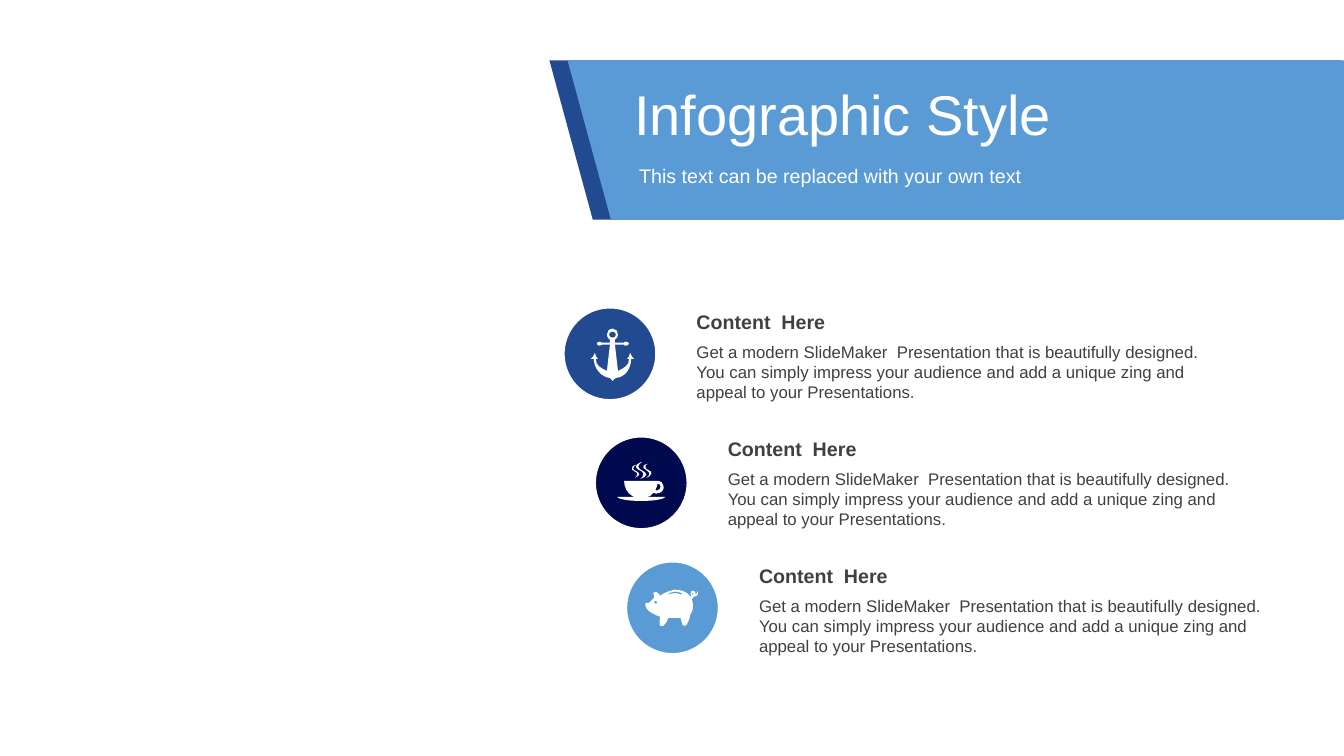
from lxml import etree
from pptx import Presentation
from pptx.dml.color import RGBColor
from pptx.enum.shapes import MSO_SHAPE as Shape
from pptx.enum.text import MSO_ANCHOR as Anchor
from pptx.oxml.ns import qn
from pptx.util import Inches, Pt

NAVY, BLUE, INK = "224A90", "5A9BD5", "010A4F"
WHITE, GREY = "FFFFFF", "404040"
BODY = ("Get a modern SlideMaker  Presentation that is beautifully designed. "
        "You can simply impress your audience and add a unique zing and "
        "appeal to your Presentations.")

# Icon outlines in hundredths of an inch: M move, L line, C cubic curve, Z close
ANCHOR = """
M 22 3 C 20 3 18 4 18 6 C 18 8 20 9 22 9 C 23 9 25 8 25 6 C 25 4 23 3 22 3 Z
M 22 0 C 25 0 27 3 27 6 C 27 8 26 10 24 11 L 24 14 L 33 14
C 33 13 34 13 35 13 C 36 13 38 14 38 15 C 38 16 36 17 35 17
C 34 17 33 17 33 16 L 24 16 L 27 42 C 33 39 38 37 38 30
C 37 30 37 30 36 30 C 37 29 39 27 39 24 C 40 27 41 28 43 30
C 42 30 41 30 40 30 C 40 39 35 48 25 49 C 23 50 22 51 22 52
C 21 51 20 50 19 49 C 10 48 3 39 3 30 C 2 30 1 30 0 30
C 2 29 3 27 4 24 C 4 27 6 28 7 30 C 7 30 6 30 5 30 C 5 37 10 39 16 42
L 19 16 L 11 16 C 10 17 10 17 9 17 C 7 17 6 16 6 15 C 6 14 7 13 9 13
C 10 13 10 13 11 14 L 19 14 L 19 11 C 17 10 16 8 16 6 C 16 3 18 0 22 0 Z"""
CUP = """
M 40 22 C 40 24 39 26 38 28 C 39 29 40 29 41 28 C 43 28 43 26 43 24
C 43 23 42 22 40 22 Z
M 41 19 C 43 19 46 21 46 24 C 47 27 45 30 42 31 C 40 32 38 32 36 31
C 35 32 34 33 33 34 C 32 34 30 35 29 35 L 48 35 C 47 37 37 39 24 39
C 11 39 1 37 0 35 L 18 35 C 17 35 16 34 15 34 C 10 31 7 25 7 19 Z
M 19 3 C 17 5 16 5 16 7 C 17 10 22 9 22 13 C 21 14 20 15 18 16
C 19 15 20 14 20 12 C 20 10 16 10 15 8 C 14 6 15 4 19 3 Z
M 31 2 C 29 3 28 3 28 5 C 28 9 35 8 34 12 C 33 14 32 15 29 16
C 31 14 32 14 32 12 C 32 9 28 9 26 6 C 25 4 27 3 31 2 Z
M 25 0 C 23 2 21 3 21 5 C 22 9 29 9 29 13 C 28 15 27 16 23 17
C 25 16 26 15 26 12 C 26 9 21 9 19 6 C 18 4 20 2 25 0 Z"""
PIG = """
M 10 11 C 9 11 9 12 9 13 C 9 13 9 14 10 14 C 11 14 12 13 12 13
C 12 12 11 11 10 11 Z
M 47 3 C 47 3 46 3 46 4 C 46 5 47 5 47 5 C 48 5 48 5 48 4 C 48 3 48 3 47 3 Z
M 30 2 C 27 2 25 3 23 4 L 23 5 C 27 3 32 3 36 5 L 37 4 C 35 3 33 2 30 2 Z
M 29 0 C 35 0 41 2 44 6 L 45 7 C 46 7 46 7 46 6 C 45 6 45 5 45 4
C 45 2 46 1 47 1 C 49 1 50 2 50 4 C 50 5 50 4 49 5 C 50 5 51 5 52 1
C 53 5 51 7 48 7 C 48 8 47 9 46 9 L 47 12 C 48 17 47 22 45 24
C 44 29 43 31 41 35 C 41 36 37 36 37 35 C 36 33 36 30 35 28
C 31 28 26 28 23 28 C 22 31 20 34 18 36 L 15 36 C 14 36 14 30 15 27
C 10 25 0 22 0 14 C 0 13 3 13 4 13 C 6 11 7 10 9 8 C 9 6 8 4 8 3
C 12 1 13 4 15 6 C 18 3 25 1 29 0 Z"""

# colour, drop of the disc, icon outline, icon place inside the disc
ROWS = [(NAVY, 0, ANCHOR, 0.28, 0.22),
        (INK, 0.02, CUP, 0.23, 0.26),
        (BLUE, 0, PIG, 0.2, 0.29)]


def rgb(code):
    return RGBColor.from_string(code)


def paint(shape, fill):
    """Give a flat fill with no line or shadow."""
    shape.shadow.inherit = False
    shape.fill.solid()
    shape.fill.fore_color.rgb = rgb(fill)
    shape.line.fill.background()


def trace(text):
    """Split outline text into contours of points, and the kinds of segment."""
    loops, kinds, marks = [], [], iter(text.split())
    for mark in marks:
        if mark == "Z":
            continue
        pts = [(int(next(marks)), int(next(marks)))
               for _ in range(3 if mark == "C" else 1)]
        if mark == "M":
            loops.append(pts)
        else:
            loops[-1] += pts
            kinds.append(mark)
    return loops, kinds


def bend(shape, kinds):
    """Join each three line steps that stand for a curve into one."""
    steps = iter(list(shape.element.iter(qn("a:lnTo"))))
    for kind in kinds:
        first = next(steps)
        if kind == "C":
            cubic = etree.Element(qn("a:cubicBezTo"))
            first.addprevious(cubic)
            for step in (first, next(steps), next(steps)):
                cubic.append(step[0])
                step.getparent().remove(step)


def outline(slide, x, y, loops, fill, unit=1):
    """Draw closed contours at x, y; unit is the length of one step."""
    build = None
    for loop in loops:
        pts = [(Inches(x + px * unit), Inches(y + py * unit)) for px, py in loop]
        if build is None:
            build = slide.shapes.build_freeform(*pts[0])
        else:
            build.move_to(*pts[0])
        build.add_line_segments(pts[1:], close=True)
    shape = build.convert_to_shape()
    paint(shape, fill)
    return shape


def write(slide, x, y, w, h, text, size, color, bold=False,
          anchor=Anchor.MIDDLE, left=0.1, gap=None):
    box = slide.shapes.add_textbox(Inches(x), Inches(y), Inches(w), Inches(h))
    frame = box.text_frame
    frame.word_wrap = True
    frame.vertical_anchor = anchor
    frame.margin_left = Inches(left)
    para = frame.paragraphs[0]
    para.line_spacing = gap
    run = para.add_run()
    run.text = text
    font = run.font
    font.name, font.size, font.bold = "Arial", Pt(size), bold
    font.color.rgb = rgb(color)


def banner(slide, x, y, w, h):
    slant, edge = 0.43, 0.18
    for left, right, fill in [(0, w - 0.02, NAVY), (edge, w, BLUE)]:
        outline(slide, x, y, [[(left, 0), (right, 0), (right, h),
                               (left + slant, h)]], fill)
    write(slide, x + 0.74, y + 0.17, w - 0.74, 0.78,
          "Infographic Style", 40, WHITE, gap=0.9)
    write(slide, x + 0.73, y + 1, w - 0.73, 0.31,
          "This text can be replaced with your own text", 14, WHITE,
          left=0.16, gap=0.9)


def row(slide, x, y, fill, drop, icon, dx, dy):
    size, text = 0.94, x + 1.23
    disc = slide.shapes.add_shape(Shape.OVAL, Inches(x), Inches(y + drop),
                                  Inches(size), Inches(size))
    paint(disc, fill)
    disc.line.color.rgb = rgb(WHITE)
    disc.line.width = Pt(3)
    loops, kinds = trace(icon)
    bend(outline(slide, x + dx, y + drop + dy, loops, WHITE, 0.01), kinds)
    write(slide, text, y + 0.3, 5.23, 0.67, BODY, 12, GREY, anchor=Anchor.TOP)
    write(slide, text, y, 5.23, 0.31, "Content  Here", 14, GREY, bold=True)


def main():
    deck = Presentation()
    deck.slide_width, deck.slide_height = Inches(13.33), Inches(7.5)
    slide = deck.slides.add_slide(deck.slide_layouts[6])
    banner(slide, 5.45, 0.6, 7.88, 1.58)
    for i, parts in enumerate(ROWS):
        row(slide, 5.58 + 0.31 * i, 3.04 + 1.26 * i, *parts)
    deck.save("out.pptx")


if __name__ == "__main__":
    main()
